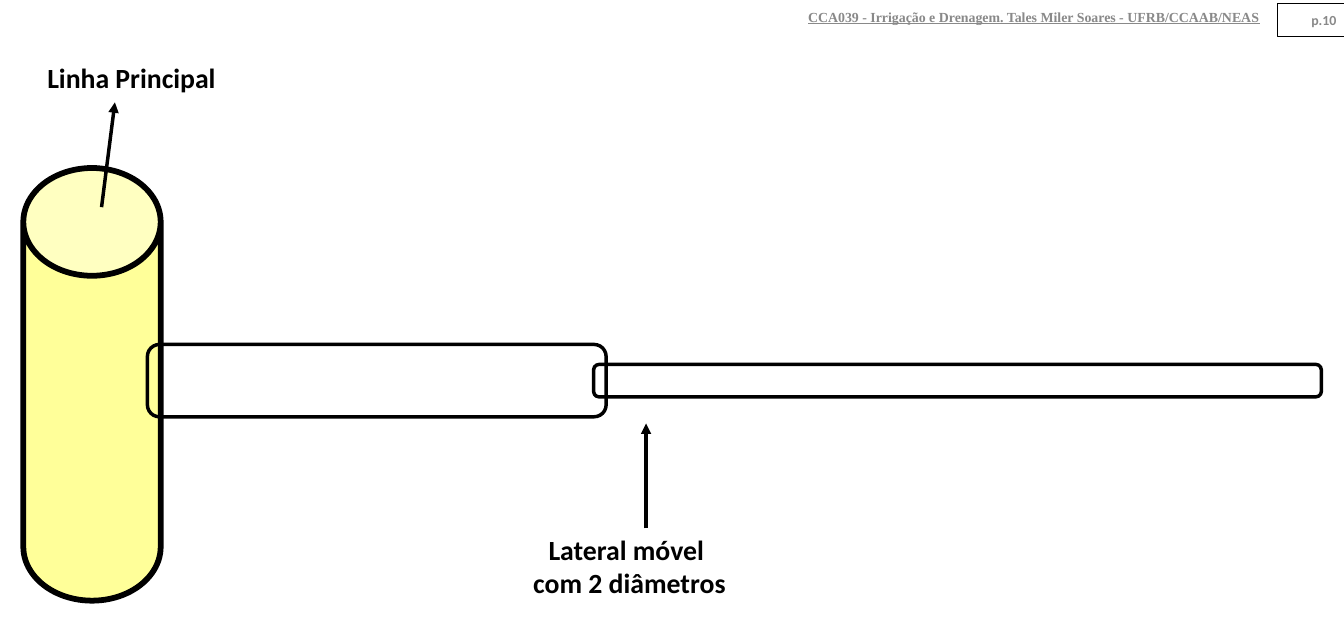
from dataclasses import dataclass
from typing import Optional

from lxml.etree import SubElement
from pptx import Presentation
from pptx.dml.color import RGBColor
from pptx.enum.shapes import MSO_CONNECTOR as Connector, MSO_SHAPE as Preset
from pptx.enum.text import MSO_ANCHOR as Anchor, PP_ALIGN as Align
from pptx.oxml.ns import qn
from pptx.slide import Slide
from pptx.util import Cm, Inches, Pt

EMU_PER_PX = 9144


@dataclass(frozen=True)
class Theme:
    black: str = "000000"
    white: str = "FFFFFF"
    grey: str = "898989"
    yellow: str = "FFFF99"
    body_font: str = "Calibri"
    header_font: str = "Times New Roman"
    label_size: int = 24
    header_size: int = 12
    thin: float = 0.75
    medium: float = 3
    thick: float = 5


THEME = Theme()


@dataclass(frozen=True)
class Box:
    left: int
    top: int
    width: int
    height: int


@dataclass(frozen=True)
class Pipe:
    box: Box
    preset: Preset
    adjustment: float
    line_width: float
    fill: Optional[str] = None


@dataclass(frozen=True)
class Label:
    box: Box
    text: str
    border: Optional[str] = THEME.white
    font: str = THEME.body_font
    size: int = THEME.label_size
    color: str = THEME.black
    align: Align = Align.CENTER
    anchor: Anchor = Anchor.TOP
    underline: bool = False


@dataclass(frozen=True)
class Arrow:
    start: tuple[int, int]
    end: tuple[int, int]


HEADER = dict(size=THEME.header_size, color=THEME.grey, align=Align.RIGHT, anchor=Anchor.MIDDLE)

HEADER_LABELS = [
    Label(Box(706, 0, 817, 40), "CCA039 - Irrigação e Drenagem. Tales Miler Soares - UFRB/CCAAB/NEAS",
          border=None, font=THEME.header_font, underline=True, **HEADER),
    Label(Box(1534, 4, 81, 40), "p.10", border=THEME.black, **HEADER),
]
PIPE_LABELS = [
    Label(Box(28, 68, 260, 51), "Linha Principal"),
    Label(Box(516, 635, 480, 91), "Lateral móvel \ncom 2 diâmetros"),
]
PIPES = [
    Pipe(Box(28, 202, 165, 520), Preset.CAN, 0.785, THEME.thick, THEME.yellow),
    Pipe(Box(177, 414, 551, 87), Preset.ROUNDED_RECTANGLE, 0.167, THEME.medium),
    Pipe(Box(713, 438, 874, 39), Preset.ROUNDED_RECTANGLE, 0.167, THEME.medium),
]
ARROWS = [
    Arrow((122, 249), (138, 123)),
    Arrow((776, 635), (776, 509)),
]


def px(*lengths: int) -> list[int]:
    return [length * EMU_PER_PX for length in lengths]


def add_preset(slide: Slide, preset: Preset, box: Box, fill: Optional[str],
               border: Optional[str], line_width: float):
    shape = slide.shapes.add_shape(preset, *px(box.left, box.top, box.width, box.height))
    shape.shadow.inherit = False
    if fill:
        shape.fill.solid()
        shape.fill.fore_color.rgb = RGBColor.from_string(fill)
    else:
        shape.fill.background()
    if border:
        shape.line.color.rgb = RGBColor.from_string(border)
        shape.line.width = Pt(line_width)
    else:
        shape.line.fill.background()
    return shape


def draw_pipe(slide: Slide, pipe: Pipe) -> None:
    shape = add_preset(slide, pipe.preset, pipe.box, pipe.fill, THEME.black, pipe.line_width)
    shape.adjustments[0] = pipe.adjustment


def draw_label(slide: Slide, label: Label) -> None:
    shape = add_preset(slide, Preset.RECTANGLE, label.box, None, label.border, THEME.thin)
    frame = shape.text_frame
    frame.text = label.text
    frame.word_wrap = True
    frame.vertical_anchor = label.anchor
    for paragraph in frame.paragraphs:
        paragraph.alignment = label.align
        for run in paragraph.runs:
            run.font.name = label.font
            run.font.size = Pt(label.size)
            run.font.bold = True
            run.font.underline = label.underline
            run.font.color.rgb = RGBColor.from_string(label.color)


def draw_arrow(slide: Slide, arrow: Arrow) -> None:
    connector = slide.shapes.add_connector(Connector.STRAIGHT, *px(*arrow.start, *arrow.end))
    connector.line.color.rgb = RGBColor.from_string(THEME.black)
    connector.line.width = Pt(THEME.medium)
    properties = connector._element.spPr
    SubElement(properties.find(qn("a:ln")), qn("a:tailEnd"), type="triangle")
    SubElement(properties, qn("a:effectLst"))


def main() -> None:
    presentation = Presentation()
    presentation.slide_width, presentation.slide_height = Cm(41), Inches(7.5)
    slide = presentation.slides.add_slide(presentation.slide_layouts[6])
    for pipe in PIPES:
        draw_pipe(slide, pipe)
    for label in HEADER_LABELS + PIPE_LABELS:
        draw_label(slide, label)
    for arrow in ARROWS:
        draw_arrow(slide, arrow)
    presentation.save("out.pptx")


if __name__ == "__main__":
    main()
